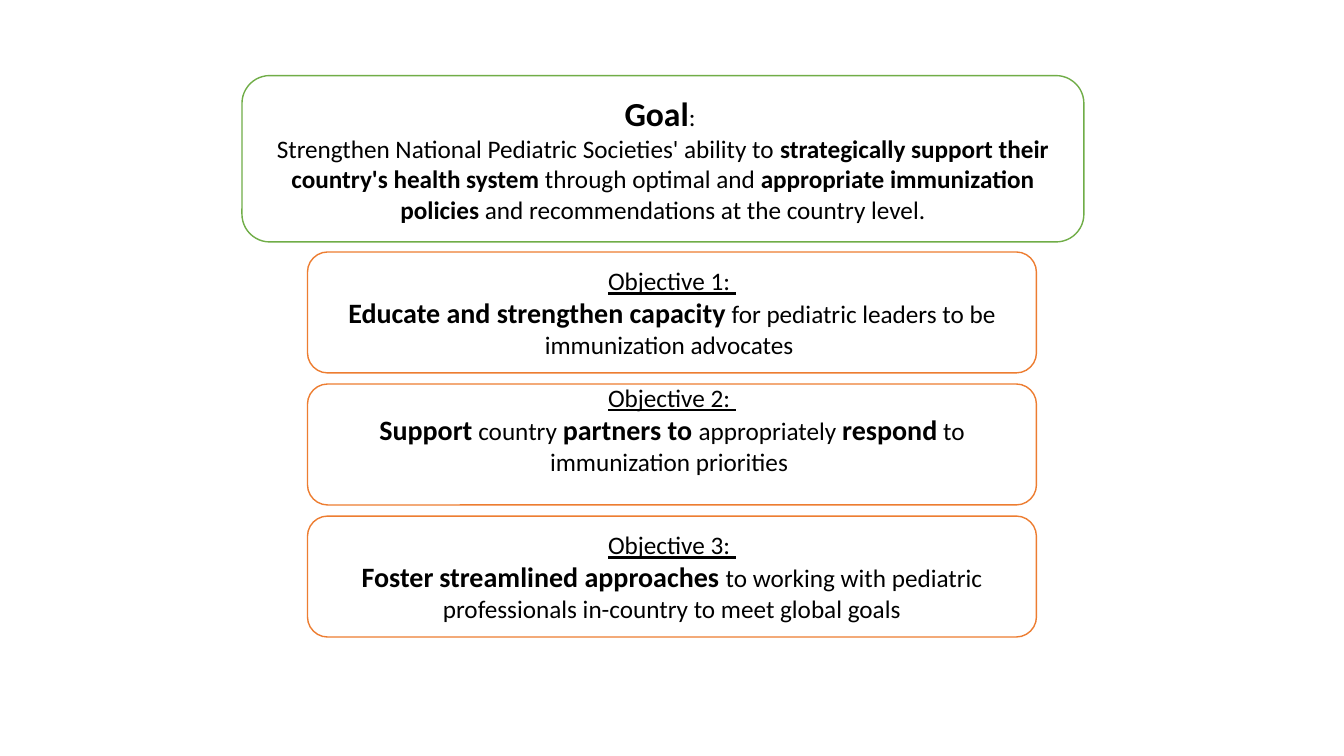
from dataclasses import dataclass

from pptx import Presentation
from pptx.dml import color
from pptx.enum import shapes, text
from pptx.util import Inches, Pt


@dataclass(frozen=True)
class Theme:
    font: str = "Calibri"
    ink: str = "000000"
    paper: str = "FFFFFF"
    green: str = "70AD47"
    orange: str = "ED7D31"
    body: int = 18
    key: int = 20
    head: int = 24
    edge: int = 1


@dataclass(frozen=True)
class Span:
    words: str
    size: int
    bold: bool = False
    under: bool = False


@dataclass(frozen=True)
class Panel:
    left: float
    top: float
    width: float
    height: float
    edge: str
    lines: list[list[Span]]
    base: float = 0.05


LOOK = Theme()


def plain(words: str) -> Span:
    return Span(words, LOOK.body)


def strong(words: str) -> Span:
    return Span(words, LOOK.body, bold=True)


def key(words: str) -> Span:
    return Span(words, LOOK.key, bold=True)


def rgb(code: str) -> color.RGBColor:
    return color.RGBColor.from_string(code)


def draw(slide, panel: Panel) -> None:
    box = slide.shapes.add_shape(
        shapes.MSO_SHAPE.ROUNDED_RECTANGLE,
        Inches(panel.left), Inches(panel.top),
        Inches(panel.width), Inches(panel.height),
    )
    box.shadow.inherit = False
    box.fill.solid()
    box.fill.fore_color.rgb = rgb(LOOK.paper)
    box.line.color.rgb = rgb(panel.edge)
    box.line.width = Pt(LOOK.edge)
    frame = box.text_frame
    frame.word_wrap = True
    frame.vertical_anchor = text.MSO_ANCHOR.MIDDLE
    frame.margin_bottom = Inches(panel.base)
    for index, line in enumerate(panel.lines):
        para = frame.add_paragraph() if index else frame.paragraphs[0]
        para.alignment = text.PP_ALIGN.CENTER
        for span in line:
            run = para.add_run()
            run.text = span.words
            run.font.name = LOOK.font
            run.font.size = Pt(span.size)
            run.font.bold = span.bold
            run.font.underline = span.under
            run.font.color.rgb = rgb(LOOK.ink)


GOAL = Panel(2.4, 0.75, 8.35, 1.65, LOOK.green, [
    [Span("Goal", LOOK.head, bold=True), plain(": ")],
    [
        plain("Strengthen National Pediatric Societies' ability to "),
        strong("strategically support their country's health system "),
        plain("through optimal and "),
        strong("appropriate immunization policies "),
        plain("and recommendations at the country level."),
    ],
])

AIMS = [
    [
        key("Educate and strengthen capacity"),
        strong(" "),
        plain("for pediatric leaders to be immunization advocates "),
    ],
    [
        key("Support"),
        plain(" country "),
        key("partners to "),
        plain("appropriately "),
        key("respond"),
        plain(" to immunization priorities "),
    ],
    [
        key("Foster"),
        plain(" "),
        key("streamlined approaches "),
        plain("to working with pediatric professionals in-country to meet global goals"),
    ],
]
BASES = [0.05, 0.35, 0.05]
FIRST, STEP = 2.5, 1.31


def main() -> None:
    deck = Presentation()
    deck.slide_width = Inches(13.33)
    deck.slide_height = Inches(7.5)
    slide = deck.slides.add_slide(deck.slide_layouts[6])
    draw(slide, GOAL)
    for index, (aim, base) in enumerate(zip(AIMS, BASES)):
        title = Span(f"Objective {index + 1}: ", LOOK.body, under=True)
        draw(slide, Panel(3.05, FIRST + index * STEP, 7.23, 1.2,
                          LOOK.orange, [[title], aim], base))
    deck.save("out.pptx")


if __name__ == "__main__":
    main()
